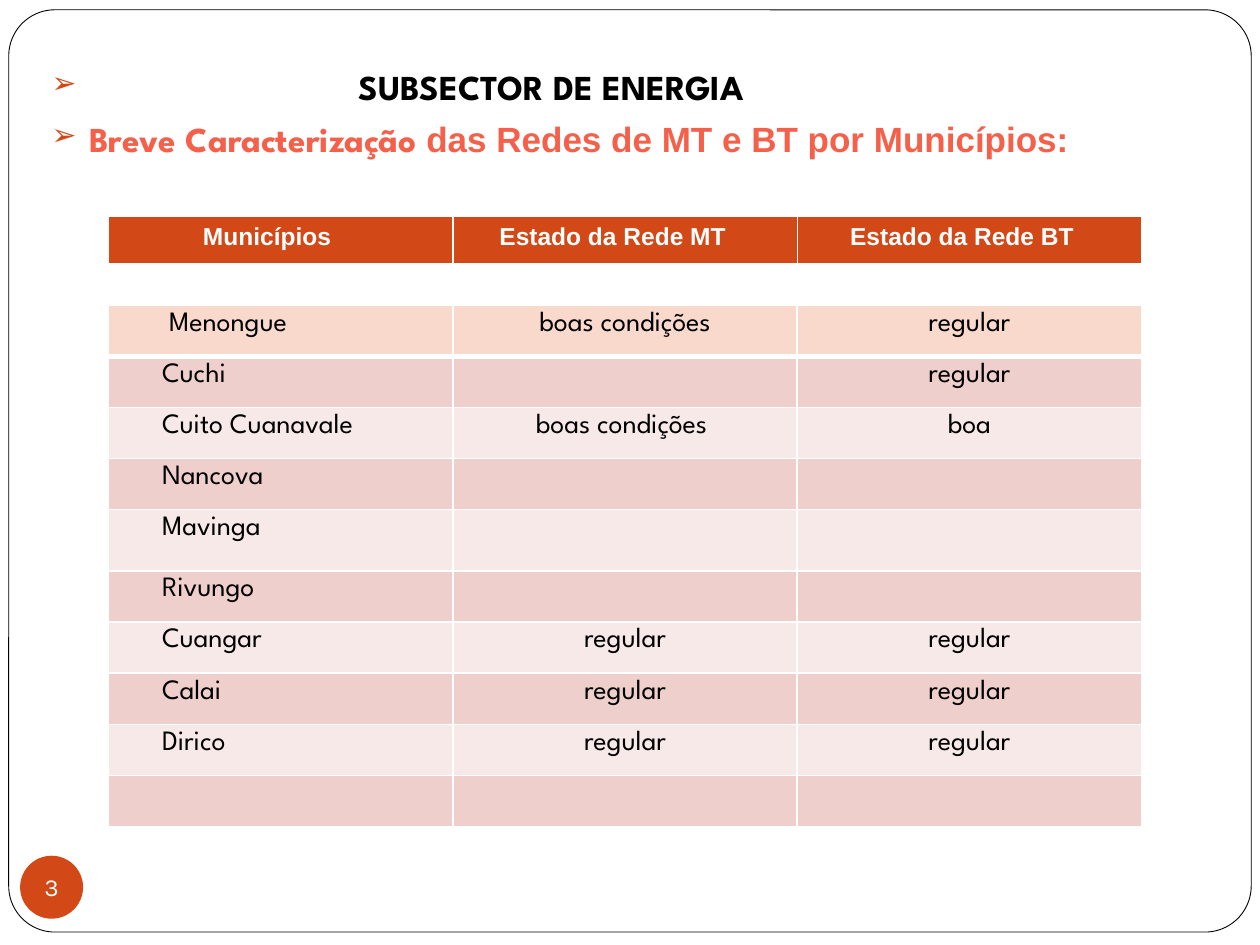
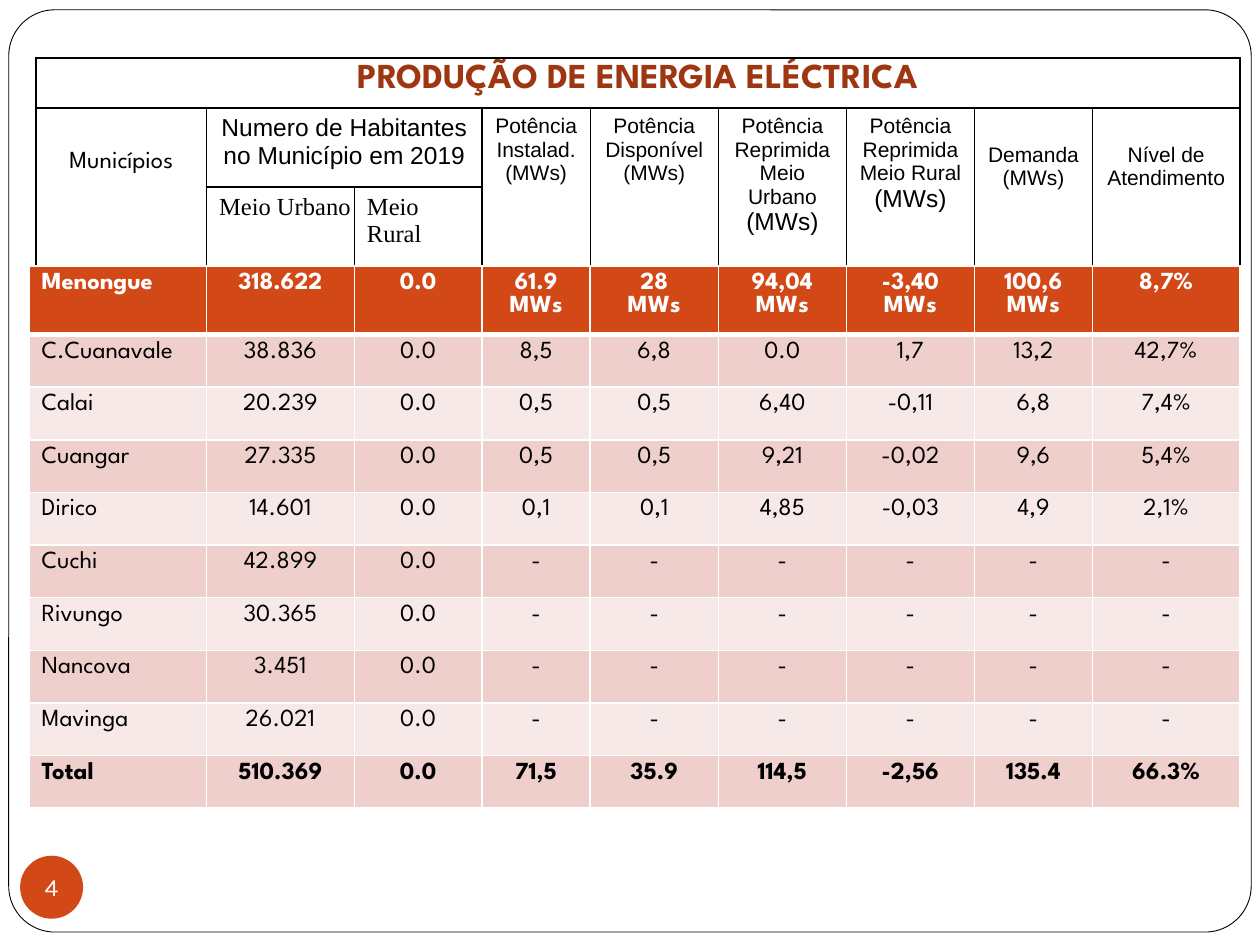
"""Builds two slides on the electricity networks and output of the municipalities."""
from dataclasses import dataclass

from lxml import etree
from pptx import Presentation
from pptx.dml.color import RGBColor
from pptx.enum import shapes, text
from pptx.oxml import ns
from pptx.util import Pt

LEFT, CENTER = text.PP_ALIGN.LEFT, text.PP_ALIGN.CENTER


@dataclass(frozen=True)
class Theme:
    accent: str = "D34817"
    heading: str = "F5604A"
    title: str = "9E3611"
    pale: str = "FAD9CD"
    band_dark: str = "EFCFCC"
    band_light: str = "F7E9E8"
    black: str = "000000"
    white: str = "FFFFFF"
    display: str = "League Spartan"
    sans: str = "Arial"
    serif: str = "Times New Roman"
    number: str = "Karla"
    title_size: int = 20
    cell_size: int = 16
    label_size: int = 14
    small_size: int = 12


T = Theme()


@dataclass(frozen=True)
class Style:
    font: str
    size: float
    color: str = T.black
    bold: bool = False


@dataclass(frozen=True)
class Look:
    style: Style
    fill: str | None = None
    line: str = T.white
    bottom: float = 1
    align: text.PP_ALIGN = CENTER
    left: float = 7.2
    top: float = 3.6


@dataclass(frozen=True)
class Heading:
    label: str
    row: int
    col: int
    rows: int
    cols: int
    look: Look
    unit_size: int | None = None


SMALL = Style(T.sans, T.small_size)
LABEL = Style(T.sans, T.label_size)
SERIF = Style(T.serif, T.label_size)
BODY = Style(T.display, T.label_size)
BODY_BOLD = Style(T.display, T.label_size, bold=True)
BODY_FIRST = Style(T.display, T.label_size, T.white, True)
CELL = Style(T.display, T.cell_size)
TITLE = Style(T.display, T.title_size, T.title, True)
SUBJECT = Style(T.display, T.title_size, T.heading, True)
SUBJECT_SANS = Style(T.sans, T.title_size, T.heading, True)
NETWORK_HEAD = Style(T.sans, T.label_size, T.white, True)

NETWORKS = [
    ("Menongue", "boas condições", "regular"),
    ("Cuchi", "", "regular"),
    ("Cuito Cuanavale", "boas condições ", "boa"),
    ("Nancova", "", ""),
    ("Mavinga", "", ""),
    ("Rivungo", "", ""),
    ("Cuangar", "regular", "regular"),
    ("Calai", "regular", "regular"),
    ("Dirico", "regular", "regular"),
    ("", "", ""),
]
NETWORK_HEADS = [("Municípios", 54), ("Estado da Rede MT", 26.6), ("Estado da Rede BT", 30.2)]
NETWORK_LEFT, NETWORK_COL = 62, 196.8

NO_DATA = ("-",) * 6
PRODUCTION = [
    ("Menongue", "318.622", "0.0", "61.9 MWs", "28\nMWs", "94,04\nMWs", "-3,40\nMWs",
     "100,6\nMWs", "8,7%"),
    ("C.Cuanavale", "38.836", "0.0", "8,5", "6,8", "0.0", "1,7", "13,2", "42,7%"),
    ("Calai", "20.239", "0.0", "0,5", "0,5", "6,40", "-0,11", "6,8", "7,4%"),
    ("Cuangar", "27.335", "0.0", "0,5", "0,5", "9,21", "-0,02", "9,6", "5,4%"),
    ("Dirico", "14.601", "0.0", "0,1", "0,1", "4,85", "-0,03", "4,9", "2,1%"),
    ("Cuchi", "42.899", "0.0", *NO_DATA),
    ("Rivungo", "30.365", "0.0", *NO_DATA),
    ("Nancova", "3.451", "0.0", *NO_DATA),
    ("Mavinga", "26.021", "0.0", *NO_DATA),
    ("Total", "510.369", "0.0", "71,5", "35.9", "114,5", "-2,56", "135.4", "66.3%"),
]
PRODUCTION_COLS = [84.5, 73, 61.8, 73.2, 73.2, 73.2, 67.4, 84.3]
HEAD_COLS = [97.4, *PRODUCTION_COLS]
HEAD_LEFT, HEAD_TOP, HEAD_ROW = 20.6, 61.8, 45

BOXED = Look(SMALL, line=T.black)
LOWERED = Look(SMALL, line=T.black, top=20)
SUBHEAD = Look(SERIF, line=T.black, align=LEFT)
PRODUCTION_HEADS = [
    Heading("", 0, 0, 2, 9, BOXED),
    Heading("Municípios", 0, 0, 2, 1, Look(BODY, line=T.black, top=24.4)),
    Heading("Potência\nDisponível\n(MWs)", 0, 4, 2, 1, BOXED),
    Heading("Potência\nInstalad.\n(MWs)", 0, 3, 2, 1, BOXED),
    Heading("Potência\nReprimida\nMeio Urbano\n(MWs)", 0, 5, 2, 1, BOXED, T.label_size),
    Heading("Potência\nReprimida\nMeio Rural\n(MWs)", 0, 6, 2, 1, BOXED, T.label_size),
    Heading("Demanda\n(MWs)", 0, 7, 2, 1, LOWERED),
    Heading("Meio Urbano", 1, 1, 1, 2, SUBHEAD),
    Heading("Numero de Habitantes no Município em 2019", 0, 1, 1, 2, Look(LABEL, line=T.black)),
    Heading("Meio Rural", 1, 2, 1, 1, SUBHEAD),
    Heading("Nível de\nAtendimento", 0, 8, 2, 1, LOWERED),
]


def rgb(value: str) -> RGBColor:
    return RGBColor.from_string(value)


def format_run(r, style: Style) -> None:
    r.font.name, r.font.size, r.font.bold = style.font, Pt(style.size), style.bold
    r.font.color.rgb = rgb(style.color)


def format_text(tf, style: Style, align: text.PP_ALIGN) -> None:
    for p in tf.paragraphs:
        p.alignment = align
        for r in p.runs:
            format_run(r, style)


def add_bullet(p, indent: float) -> None:
    pPr = p._p.get_or_add_pPr()
    pPr.set("marL", str(Pt(indent)))
    pPr.set("indent", str(-Pt(indent)))
    color = etree.SubElement(pPr, ns.qn("a:buClr"))
    etree.SubElement(color, ns.qn("a:srgbClr"), val=T.accent)
    etree.SubElement(pPr, ns.qn("a:buSzPct"), val="85000")
    etree.SubElement(pPr, ns.qn("a:buFont"), typeface=T.display)
    etree.SubElement(pPr, ns.qn("a:buChar"), char="➢")


def set_borders(cell, color: str, bottom: float) -> None:
    tcPr = cell._tc.get_or_add_tcPr()
    for i, side in enumerate("LRTB"):
        ln = etree.Element(ns.qn(f"a:ln{side}"), w=str(Pt(bottom if side == "B" else 1)))
        fill = etree.SubElement(ln, ns.qn("a:solidFill"))
        etree.SubElement(fill, ns.qn("a:srgbClr"), val=color)
        tcPr.insert(i, ln)


def fill_cell(cell, label: str, look: Look) -> None:
    cell.text_frame.text = label
    format_text(cell.text_frame, look.style, look.align)
    cell.margin_left, cell.margin_top = Pt(look.left), Pt(look.top)
    if look.fill:
        cell.fill.solid()
        cell.fill.fore_color.rgb = rgb(look.fill)
    else:
        cell.fill.background()
    set_borders(cell, look.line, look.bottom)


def add_grid(s, left: float, top: float, cols: list[float], rows: list[float]):
    tbl = s.shapes.add_table(len(rows), len(cols), Pt(left), Pt(top),
                             Pt(sum(cols)), Pt(sum(rows))).table
    tbl.first_row = tbl.horz_banding = False
    for col, width in zip(tbl.columns, cols):
        col.width = Pt(width)
    for row, height in zip(tbl.rows, rows):
        row.height = Pt(height)
    return tbl


def add_cell(s, label: str, left: float, top: float, width: float, height: float, look: Look):
    cell = add_grid(s, left, top, [width], [height]).cell(0, 0)
    fill_cell(cell, label, look)
    return cell


def band(i: int) -> str:
    return T.band_dark if i % 2 else T.band_light


def add_frame(s, master) -> None:
    sp = s.shapes.add_shape(shapes.MSO_SHAPE.ROUNDED_RECTANGLE, Pt(5), Pt(5.6), Pt(710), Pt(527))
    sp.adjustments[0] = 0.05
    sp.shadow.inherit = False
    sp.fill.solid()
    sp.fill.fore_color.rgb = rgb(T.white)
    sp.line.color.rgb, sp.line.width = rgb(T.black), Pt(0.5)
    sp.element.xpath("./p:nvSpPr/p:cNvPr")[0].set("id", "20")
    master.shapes.element.insert(2, sp.element)


def add_page_number(s, number: int) -> None:
    sp = s.shapes.add_shape(shapes.MSO_SHAPE.OVAL, Pt(11.5), Pt(489), Pt(36), Pt(36))
    sp.shadow.inherit = False
    sp.fill.solid()
    sp.fill.fore_color.rgb = rgb(T.accent)
    sp.line.fill.background()
    tf = sp.text_frame
    tf.margin_left = tf.margin_top = tf.margin_right = tf.margin_bottom = 0
    tf.word_wrap = False
    tf.vertical_anchor = text.MSO_ANCHOR.MIDDLE
    tf.text = str(number)
    format_text(tf, Style(T.number, T.label_size, T.white), CENTER)


def add_network_title(s) -> None:
    sp = s.shapes.title
    sp.left, sp.top, sp.width, sp.height = Pt(22.3), Pt(33.8), Pt(651.6), Pt(94.3)
    tf = sp.text_frame
    tf.text = "SUBSECTOR DE ENERGIA\nBreve Caracterização "
    tf.word_wrap = True
    tf.auto_size = text.MSO_AUTO_SIZE.NONE
    tf.vertical_anchor = text.MSO_ANCHOR.TOP
    format_text(tf, SUBJECT, LEFT)
    sector, subject = tf.paragraphs
    sector.runs[0].font.color.rgb = rgb(T.black)
    r = subject.add_run()
    r.text = "das Redes de MT e BT por Municípios:"
    format_run(r, SUBJECT_SANS)
    subject.space_before = Pt(5.8)
    add_bullet(sector, 175.4)
    add_bullet(subject, 21.6)


def build_networks(s) -> None:
    add_network_title(s)
    for j, (label, indent) in enumerate(NETWORK_HEADS):
        look = Look(NETWORK_HEAD, T.accent, bottom=3, align=LEFT, left=indent)
        add_cell(s, label, NETWORK_LEFT + j * NETWORK_COL, 123.8, NETWORK_COL, 28, look)

    heights = [35 if row[0] == "Mavinga" else 29.2 for row in NETWORKS]
    tbl = add_grid(s, NETWORK_LEFT, 174.5, [NETWORK_COL] * 3, heights)
    for i, row in enumerate(NETWORKS):
        fill, bottom, indent = (band(i), 1, 30.6) if i else (T.pale, 3, 34.6)
        for j, label in enumerate(row):
            name_look = {} if j else {"align": LEFT, "left": indent}
            fill_cell(tbl.cell(i, j), label, Look(CELL, fill, bottom=bottom, **name_look))


def build_production(s) -> None:
    add_cell(s, "PRODUÇÃO DE ENERGIA ELÉCTRICA", HEAD_LEFT, 33.2, sum(HEAD_COLS), 28.6,
             Look(TITLE, line=T.black))
    for h in PRODUCTION_HEADS:
        left = HEAD_LEFT + sum(HEAD_COLS[:h.col])
        width = sum(HEAD_COLS[h.col:h.col + h.cols])
        cell = add_cell(s, h.label, left, HEAD_TOP + h.row * HEAD_ROW, width,
                        h.rows * HEAD_ROW, h.look)
        if h.unit_size:
            cell.text_frame.paragraphs[-1].runs[0].font.size = Pt(h.unit_size)
    add_cell(s, "", HEAD_LEFT, 153.4, sum(HEAD_COLS), 296.6, BOXED)

    tbl = add_grid(s, 16.6, 152, [101.4, *PRODUCTION_COLS], [39.2] + [30.1] * 9)
    for i, row in enumerate(PRODUCTION):
        style = BODY_BOLD if row[0] == "Total" else BODY if i else BODY_FIRST
        fill, bottom = (band(i), 1) if i else (T.accent, 3)
        for j, label in enumerate(row):
            look = Look(style, fill, bottom=bottom, align=CENTER if j else LEFT)
            fill_cell(tbl.cell(i, j), label, look)


def main() -> None:
    prs = Presentation()
    prs.slide_width, prs.slide_height = Pt(720), Pt(540)
    pages = [("Title Only", build_networks), ("Blank", build_production)]
    for number, (layout, build) in enumerate(pages, 3):
        s = prs.slides.add_slide(prs.slide_layouts.get_by_name(layout))
        if number == 3:
            add_frame(s, prs.slide_master)
        build(s)
        add_page_number(s, number)
    prs.save("out.pptx")


if __name__ == "__main__":
    main()
